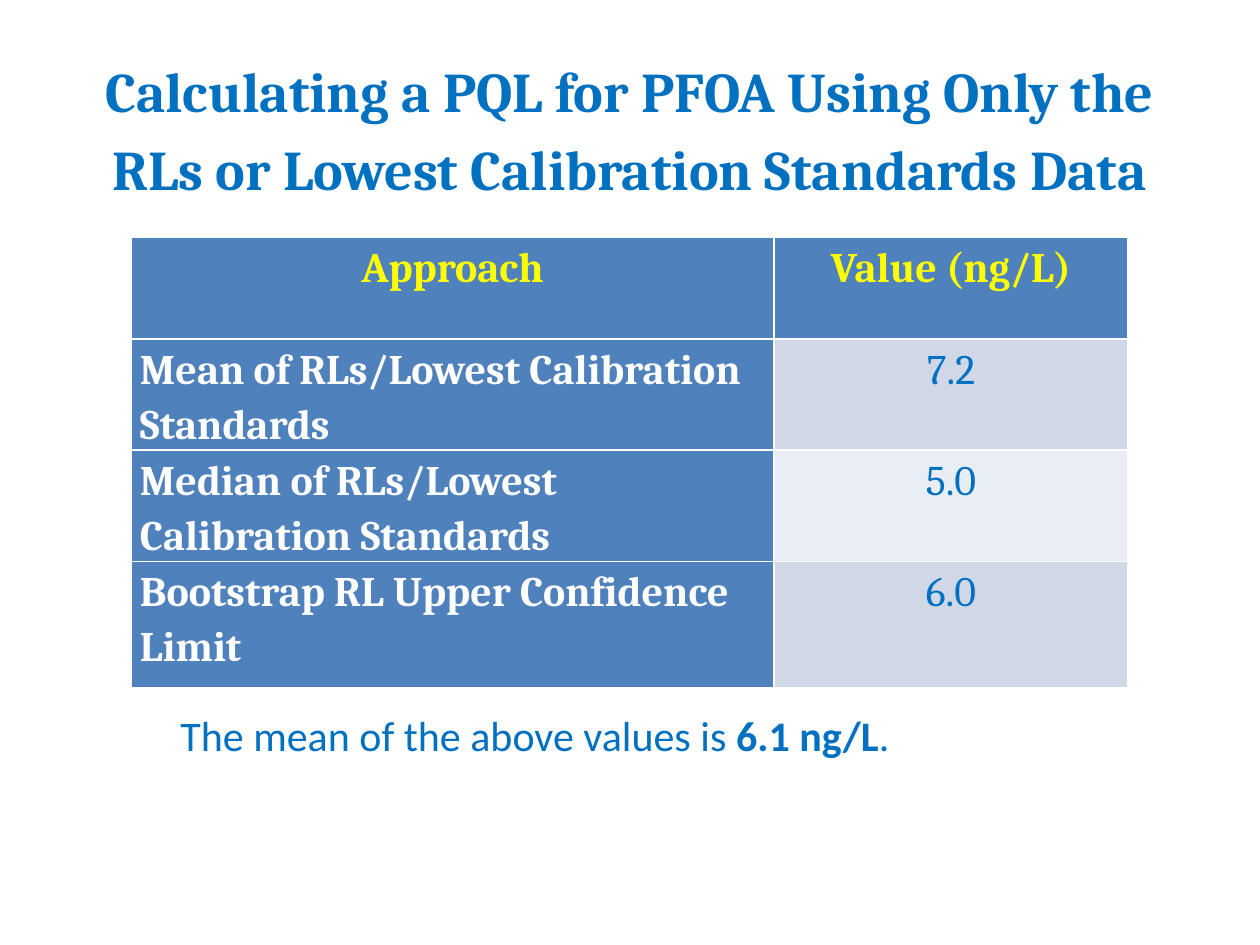
from typing import NamedTuple

from pptx import Presentation
from pptx.dml.color import RGBColor
from pptx.enum.text import MSO_ANCHOR as Anchor, MSO_AUTO_SIZE as AutoSize, PP_ALIGN as Align
from pptx.util import Emu, Pt

EMU_PER_PX = 914400 / 126
BLUE, WHITE, YELLOW, HEADER = "0070C0", "FFFFFF", "FFFF00", "4F81BD"
BANDS = ("D0D8E8", "E9EDF4")


class Box(NamedTuple):
    left: int
    top: int
    width: int
    height: int


class Approach(NamedTuple):
    name: str
    value: str
    height: int


class Style(NamedTuple):
    color: str
    size: int = 24
    name: str = "Cambria"
    bold: bool = False


TITLE = "Calculating a PQL for PFOA Using Only the RLs or Lowest Calibration Standards Data"
TITLE_BOX = Box(63, 38, 1134, 172)
TABLE_BOX = Box(131, 237, 997, 450)
NOTE_BOX = Box(168, 703, 777, 63)
COLUMN_WIDTHS = (643, 354)
ROWS = (
    Approach("Approach", "Value (ng/L)", 102),
    Approach("Mean of RLs/Lowest Calibration Standards", "7.2", 111),
    Approach("Median of RLs/Lowest Calibration Standards", "5.0", 111),
    Approach("Bootstrap RL Upper Confidence Limit", "6.0", 126),
)
NOTE = (("The mean of the above values is ", False), ("6.1 ng/L", True), (".", False))


def px(length: int) -> Emu:
    """Turn px into EMU."""
    return Emu(round(length * EMU_PER_PX))


def rgb(value: str) -> RGBColor:
    """Turn a hex string into a colour."""
    return RGBColor.from_string(value)


def set_all(target, **values) -> None:
    """Set every given attribute on the target."""
    for name, value in values.items():
        setattr(target, name, value)


def add_span(para, text: str, style: Style) -> None:
    """Add one styled run to a paragraph."""
    span = para.add_run()
    span.text = text
    set_all(span.font, name=style.name, size=Pt(style.size), bold=style.bold)
    span.font.color.rgb = rgb(style.color)


def add_title(page) -> None:
    """Place and fill the title placeholder."""
    title = page.shapes.title
    set_all(title, **{side: px(length) for side, length in TITLE_BOX._asdict().items()})
    set_all(title.text_frame, vertical_anchor=Anchor.MIDDLE, auto_size=AutoSize.NONE, word_wrap=True)
    para = title.text_frame.paragraphs[0]
    set_all(para, alignment=Align.CENTER, line_spacing=1.15)
    add_span(para, TITLE, Style(BLUE, size=32, bold=True))


def fill_cell(cell, text: str, fill: str, align: Align, style: Style) -> None:
    """Fill one table cell with colour and text."""
    cell.fill.solid()
    cell.fill.fore_color.rgb = rgb(fill)
    set_all(cell, margin_left=px(9), margin_right=px(9), margin_top=0, margin_bottom=0)
    para = cell.text_frame.paragraphs[0]
    set_all(para, alignment=align, line_spacing=1.15)
    add_span(para, text, style)


def add_approaches(page) -> None:
    """Draw the table of approaches and values."""
    frame = page.shapes.add_table(len(ROWS), len(COLUMN_WIDTHS), *map(px, TABLE_BOX))
    table = frame.table
    table.first_col = True
    for column, width in zip(table.columns, COLUMN_WIDTHS):
        column.width = px(width)
    for index, approach in enumerate(ROWS):
        table.rows[index].height = px(approach.height)
        is_header = index == 0
        name_style = Style(YELLOW if is_header else WHITE, bold=True)
        value_style = name_style if is_header else Style(BLUE)
        name_align = Align.CENTER if is_header else Align.LEFT
        value_fill = HEADER if is_header else BANDS[(index - 1) % 2]
        fill_cell(table.cell(index, 0), approach.name, HEADER, name_align, name_style)
        fill_cell(table.cell(index, 1), approach.value, value_fill, Align.CENTER, value_style)


def add_note(page) -> None:
    """Write the mean below the table."""
    box = page.shapes.add_textbox(*map(px, NOTE_BOX))
    set_all(box.text_frame, word_wrap=True, auto_size=AutoSize.SHAPE_TO_FIT_TEXT)
    for text, bold in NOTE:
        add_span(box.text_frame.paragraphs[0], text, Style(BLUE, name="Calibri", bold=bold))


def main() -> None:
    """Build and save the deck."""
    deck = Presentation()
    set_all(deck, slide_width=px(1260), slide_height=px(945))
    page = deck.slides.add_slide(deck.slide_layouts[5])
    add_title(page)
    add_approaches(page)
    add_note(page)
    deck.save("out.pptx")


if __name__ == "__main__":
    main()
